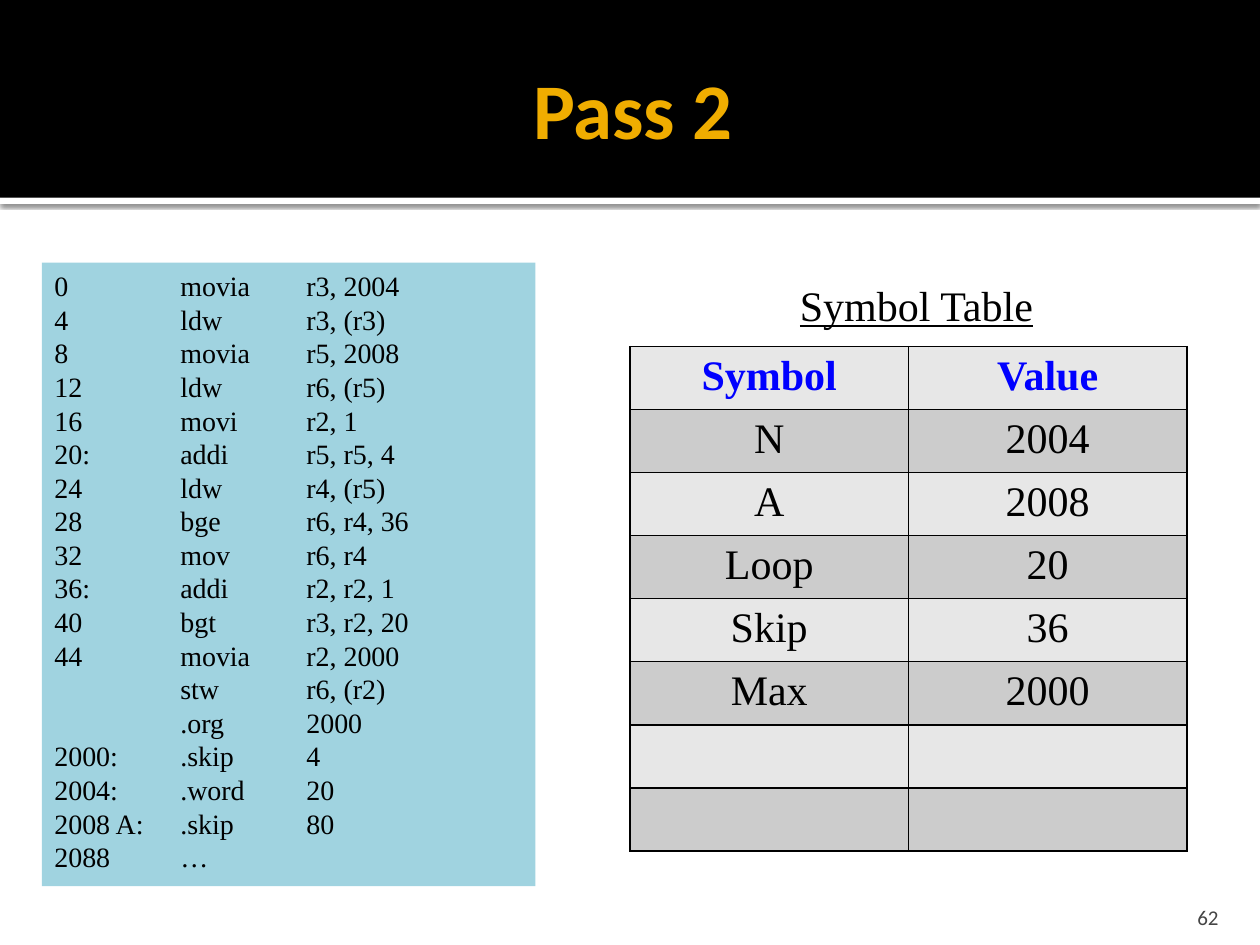
from dataclasses import dataclass

from lxml.etree import SubElement
from pptx import Presentation
from pptx.dml.color import RGBColor
from pptx.enum.shapes import MSO_SHAPE
from pptx.enum.text import MSO_ANCHOR, PP_ALIGN
from pptx.oxml import parse_xml
from pptx.oxml.ns import nsdecls, qn
from pptx.util import Pt


@dataclass(frozen=True)
class Theme:
    heading_font: str = "Calibri"
    body_font: str = "Times New Roman"
    black: str = "000000"
    white: str = "FFFFFF"
    gold: str = "F0AD00"
    gray: str = "454545"
    blue: str = "0000FF"
    panel: str = "A0D3E0"
    bands: tuple = ("E7E7E7", "CCCCCC")
    title_size: int = 45
    table_size: int = 24
    code_size: int = 16
    number_size: int = 12


theme = Theme()


def add_block(page, left, top, width, height, color):
    block = page.shapes.add_shape(
        MSO_SHAPE.RECTANGLE, Pt(left), Pt(top), Pt(width), Pt(height))
    block.shadow.inherit = False
    block.fill.solid()
    block.fill.fore_color.rgb = RGBColor.from_string(color)
    block.line.fill.background()
    return block


def format_text(frame, font, size, color, align, bold=False, underline=False):
    for para in frame.paragraphs:
        para.alignment = align
        for span in para.runs:
            span.font.name = font
            span.font.size = Pt(size)
            span.font.color.rgb = RGBColor.from_string(color)
            span.font.bold = bold
            span.font.underline = underline


deck = Presentation()
deck.slide_width, deck.slide_height = Pt(720), Pt(540)
page = deck.slides.add_slide(deck.slide_layouts[5])

# Header band with a shadowed white rule below it
rule = add_block(page, 0, 113, 720, 3.6, theme.white)
effects = rule._element.spPr.find(qn("a:effectLst"))
effects.append(parse_xml(
    f'<a:outerShdw {nsdecls("a")} blurRad="{Pt(2.5)}" dist="{Pt(0.8)}" '
    f'dir="5400000" rotWithShape="0"><a:srgbClr val="{theme.black}">'
    '<a:alpha val="60000"/></a:srgbClr></a:outerShdw>'))
add_block(page, 0, 0, 720, 113, theme.black)

# Title, raised above the band
title = page.shapes.title
page.shapes._spTree.append(title._element)
title.left, title.top, title.width, title.height = Pt(36), Pt(12.24), Pt(648), Pt(98.64)
frame = title.text_frame
frame.text = "Pass 2"
frame.vertical_anchor = MSO_ANCHOR.MIDDLE
frame.margin_left = Pt(7.2)
frame.margin_right = frame.margin_top = frame.margin_bottom = Pt(3.6)
format_text(frame, theme.heading_font, theme.title_size, theme.gold,
            PP_ALIGN.CENTER, bold=True)

# Slide number
number = page.shapes.add_textbox(Pt(645.84), Pt(509.76), Pt(57.6), Pt(21.6))
frame = number.text_frame
frame.text = "62"
frame.word_wrap = True
frame.vertical_anchor = MSO_ANCHOR.BOTTOM
frame.margin_bottom = 0
format_text(frame, theme.heading_font, theme.number_size, theme.gray, PP_ALIGN.RIGHT)

# Assembly listing: address, operation, operands
listing = [
    ("0", "movia", "r3, 2004"),
    ("4", "ldw", "r3, (r3)"),
    ("8", "movia", "r5, 2008"),
    ("12", "ldw", "r6, (r5)"),
    ("16", "movi", "r2, 1"),
    ("20:", "addi", "r5, r5, 4"),
    ("24", "ldw", "r4, (r5)"),
    ("28", "bge", "r6, r4, 36"),
    ("32", "mov", "r6, r4"),
    ("36:", "addi", "r2, r2, 1"),
    ("40", "bgt", "r3, r2, 20"),
    ("44", "movia", "r2, 2000"),
    ("", "stw", "r6, (r2)"),
    ("", ".org", "2000"),
    ("2000:", ".skip", "4"),
    ("2004:", ".word", "20"),
    ("2008 A:", ".skip", "80"),
    ("2088", "…"),
]
code = add_block(page, 24, 150, 282, 356.4, theme.panel)
frame = code.text_frame
frame.word_wrap = True
frame.vertical_anchor = MSO_ANCHOR.TOP
frame.text = "\n".join("\t".join(line) for line in listing)
format_text(frame, theme.body_font, theme.code_size, theme.black, PP_ALIGN.LEFT)
for para in frame.paragraphs:
    tabs = SubElement(para._p.get_or_add_pPr(), qn("a:tabLst"))
    for stop in (72, 144):
        SubElement(tabs, qn("a:tab"), pos=str(Pt(stop)), algn="l")

# Symbol table
symbols = [
    ("Symbol", "Value"),
    ("N", "2004"),
    ("A", "2008"),
    ("Loop", "20"),
    ("Skip", "36"),
    ("Max", "2000"),
    ("", ""),
    ("", ""),
]
row_height = 36
table = page.shapes.add_table(
    len(symbols), 2, Pt(360), Pt(198), Pt(318.24), Pt(row_height * len(symbols))).table
for row, values in enumerate(symbols):
    for column, value in enumerate(values):
        cell = table.cell(row, column)
        cell.text_frame.text = value
        format_text(cell.text_frame, theme.body_font, theme.table_size,
                    theme.black if row else theme.blue, PP_ALIGN.CENTER, bold=row == 0)
        properties = cell._tc.get_or_add_tcPr()
        for side in ("lnL", "lnR", "lnT", "lnB"):
            properties.append(parse_xml(
                f'<a:{side} {nsdecls("a")} w="{Pt(1)}"><a:solidFill>'
                f'<a:srgbClr val="{theme.black}"/></a:solidFill></a:{side}>'))
        cell.fill.solid()
        cell.fill.fore_color.rgb = RGBColor.from_string(theme.bands[row % 2])

# Table caption
caption = page.shapes.add_textbox(Pt(450), Pt(156.24), Pt(149.04), Pt(36))
frame = caption.text_frame
frame.text = "Symbol Table"
frame.word_wrap = False
format_text(frame, theme.body_font, theme.table_size, theme.black,
            PP_ALIGN.LEFT, underline=True)

deck.save("out.pptx")
